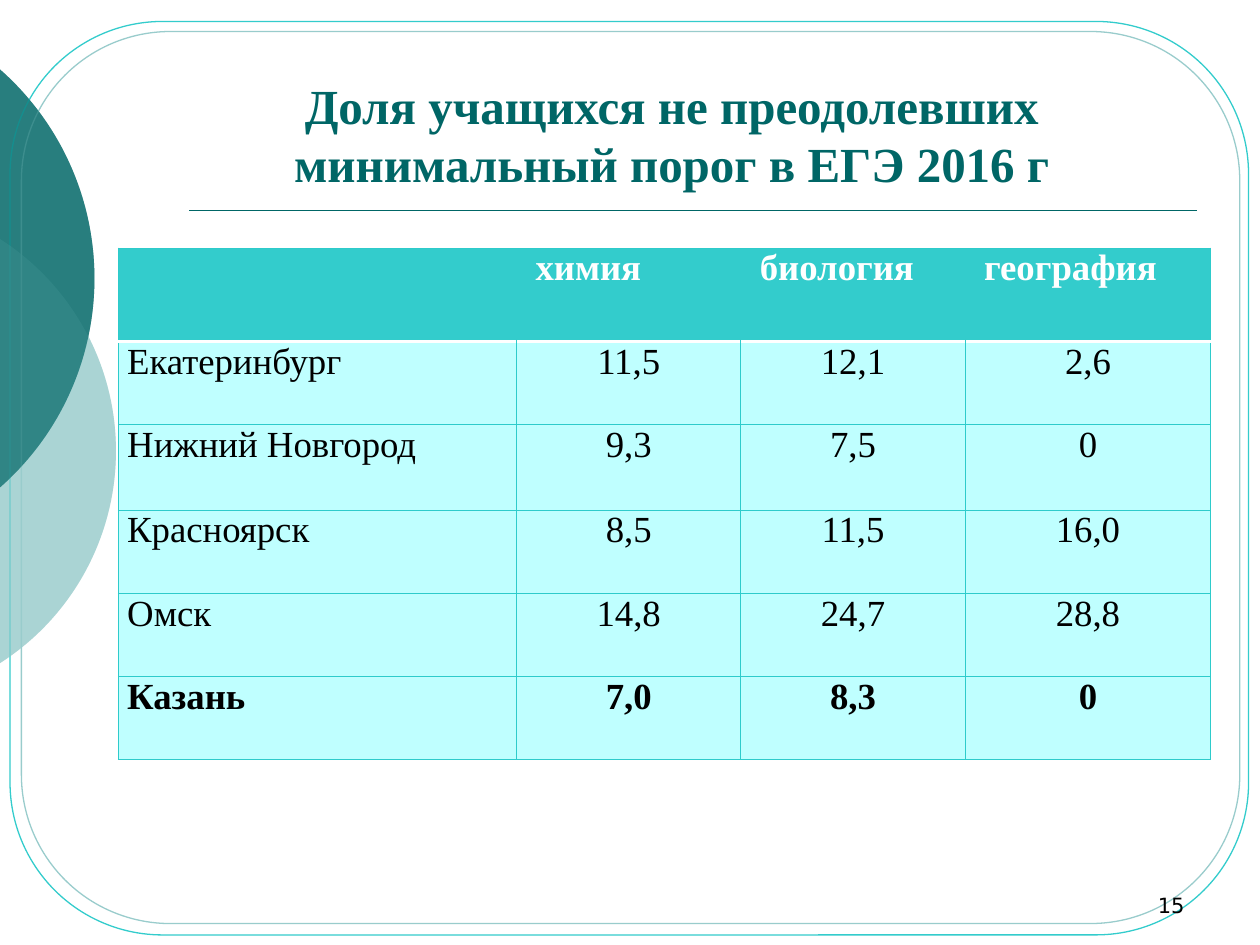
from math import acos, degrees

from lxml import etree
from pptx import Presentation
from pptx.dml.color import RGBColor
from pptx.enum.shapes import MSO_CONNECTOR, MSO_SHAPE
from pptx.enum.text import MSO_ANCHOR, PP_ALIGN
from pptx.oxml.ns import qn
from pptx.util import Inches, Pt

LEFT, CENTER, RIGHT = PP_ALIGN.LEFT, PP_ALIGN.CENTER, PP_ALIGN.RIGHT
BOTTOM = MSO_ANCHOR.BOTTOM
ROUNDED, CHORD = MSO_SHAPE.ROUNDED_RECTANGLE, MSO_SHAPE.CHORD
STRAIGHT = MSO_CONNECTOR.STRAIGHT

DARK_TEAL = RGBColor(0x00, 0x66, 0x66)
PALE_TEAL = RGBColor(0x99, 0xCC, 0xCC)
TURQUOISE = RGBColor(0x33, 0xCC, 0xCC)
GRID = RGBColor(0x2E, 0xCB, 0xCB)
ICE = RGBColor(0xBF, 0xFF, 0xFF)
WHITE = RGBColor(0xFF, 0xFF, 0xFF)
BLACK = RGBColor(0x00, 0x00, 0x00)

SERIF, SANS = "Times New Roman", "DejaVu Sans"

COLUMN_WIDTHS = [3.16, 1.78, 1.78, 1.95]
ROW_HEIGHTS = [0.74, 0.66, 0.68, 0.66, 0.66, 0.66]
RESULTS = [
    ["", "химия", "биология", "география"],
    ["Екатеринбург", "11,5", "12,1", "2,6"],
    ["Нижний Новгород", "9,3", "7,5", "0"],
    ["Красноярск", "8,5", "11,5", "16,0"],
    ["Омск", "14,8", "24,7", "28,8"],
    ["Казань", "7,0", "8,3", "0"],
]


class SlideBuilder:
    def __init__(self, slide):
        self.slide = slide

    def format_text(self, frame, text, font_name, size, color, align, bold=False):
        frame.text = text
        frame.word_wrap = True
        paragraph = frame.paragraphs[0]
        paragraph.alignment = align
        font = paragraph.font
        font.name, font.size, font.bold = font_name, Pt(size), bold
        font.color.rgb = color

    def title(self, text, left, top, width, height):
        shape = self.slide.shapes.title
        shape.left, shape.top = Inches(left), Inches(top)
        shape.width, shape.height = Inches(width), Inches(height)
        self.format_text(shape.text_frame, text, SERIF, 28, DARK_TEAL, CENTER, True)
        shape.text_frame.vertical_anchor = BOTTOM

    def text(self, text, left, top, width, height):
        shape = self.slide.shapes.add_textbox(
            Inches(left), Inches(top), Inches(width), Inches(height))
        self.format_text(shape.text_frame, text, SANS, 12, BLACK, RIGHT)
        shape.text_frame.vertical_anchor = BOTTOM

    def add_shape(self, kind, left, top, width, height):
        shape = self.slide.shapes.add_shape(
            kind, Inches(left), Inches(top), Inches(width), Inches(height))
        shape.shadow.inherit = False
        return shape

    def circle_segment(self, left, top, diameter, color, opacity):
        """Circle cut off along the slide's left edge."""
        shape = self.add_shape(CHORD, left, top, diameter, diameter)
        radius = diameter / 2
        half_angle = degrees(acos(-(left + radius) / radius))
        # Adjustments count 0.6 to the degree
        shape.adjustments[0] = (360 - half_angle) * 0.6
        shape.adjustments[1] = half_angle * 0.6
        shape.line.fill.background()
        shape.fill.solid()
        shape.fill.fore_color.rgb = color
        color_element = shape._element.spPr.find(".//" + qn("a:srgbClr"))
        etree.SubElement(color_element, qn("a:alpha"), val=str(opacity * 1000))

    def frame(self, left, top, width, height, color):
        shape = self.add_shape(ROUNDED, left, top, width, height)
        shape.adjustments[0] = 0.167
        shape.fill.background()
        shape.line.color.rgb = color
        shape.line.width = Pt(0.75)

    def rule(self, left, right, y):
        line = self.slide.shapes.add_connector(
            STRAIGHT, Inches(left), Inches(y), Inches(right), Inches(y))
        line.line.color.rgb = DARK_TEAL
        line.line.width = Pt(1)
        etree.SubElement(line._element.spPr, qn("a:effectLst"))

    def border(self, cell, side, color, width):
        properties = cell._tc.get_or_add_tcPr()
        line = etree.SubElement(properties, qn("a:ln" + side), w=str(Pt(width)))
        if color is None:
            etree.SubElement(line, qn("a:noFill"))
        else:
            fill = etree.SubElement(line, qn("a:solidFill"))
            etree.SubElement(fill, qn("a:srgbClr"), val=str(color))

    def table(self, rows, left, top, widths, heights):
        table = self.slide.shapes.add_table(
            len(rows), len(widths), Inches(left), Inches(top),
            Inches(sum(widths)), Inches(sum(heights))).table
        table.horz_banding = False
        for column, width in zip(table.columns, widths):
            column.width = Inches(width)
        for row, height in zip(table.rows, heights):
            row.height = Inches(height)
        last_row, last_column = len(rows) - 1, len(widths) - 1
        for r, values in enumerate(rows):
            header = r == 0
            for c, value in enumerate(values):
                cell = table.cell(r, c)
                # Borders: no inner verticals in the header, white line below it
                inner = None if header else GRID
                self.border(cell, "L", GRID if c == 0 else inner, 0.75)
                self.border(cell, "R", GRID if c == last_column else inner, 0.75)
                self.border(cell, "T", *((WHITE, 2) if r == 1 else (GRID, 0.75)))
                self.border(cell, "B", *((WHITE, 2) if header else (GRID, 0.75)))
                cell.fill.solid()
                cell.fill.fore_color.rgb = TURQUOISE if header else ICE
                if not value:
                    continue
                # Text: the header is indented, the figures are centred
                cell.margin_left = Inches(0.15 if header else 0.07)
                cell.margin_right = Inches(0.07)
                cell.margin_top = cell.margin_bottom = 0
                self.format_text(
                    cell.text_frame, value, SERIF, 21,
                    WHITE if header else BLACK,
                    LEFT if header or c == 0 else CENTER,
                    header or r == last_row)


def main():
    presentation = Presentation()
    presentation.slide_width, presentation.slide_height = Inches(10), Inches(7.5)
    slide = presentation.slides.add_slide(presentation.slide_layouts[5])
    builder = SlideBuilder(slide)

    # Background: circles lie both below and above the frames
    def add_circles():
        builder.circle_segment(-3.08, 1.58, 4, PALE_TEAL, 58)
        builder.circle_segment(-3.67, 0, 4.42, DARK_TEAL, 60)

    add_circles()
    builder.frame(0.08, 0.17, 9.83, 7.25, TURQUOISE)
    builder.frame(0.17, 0.25, 9.67, 7.08, PALE_TEAL)
    builder.rule(1.5, 9.5, 1.67)
    add_circles()

    # Title, table and page number
    builder.title("Доля учащихся не преодолевших минимальный порог в ЕГЭ 2016 г",
                  1.17, 0.33, 8.32, 1.25)
    builder.table(RESULTS, 0.94, 1.97, COLUMN_WIDTHS, ROW_HEIGHTS)
    builder.text("15", 7.17, 6.83, 2.33, 0.5)

    presentation.save("out.pptx")


if __name__ == "__main__":
    main()
